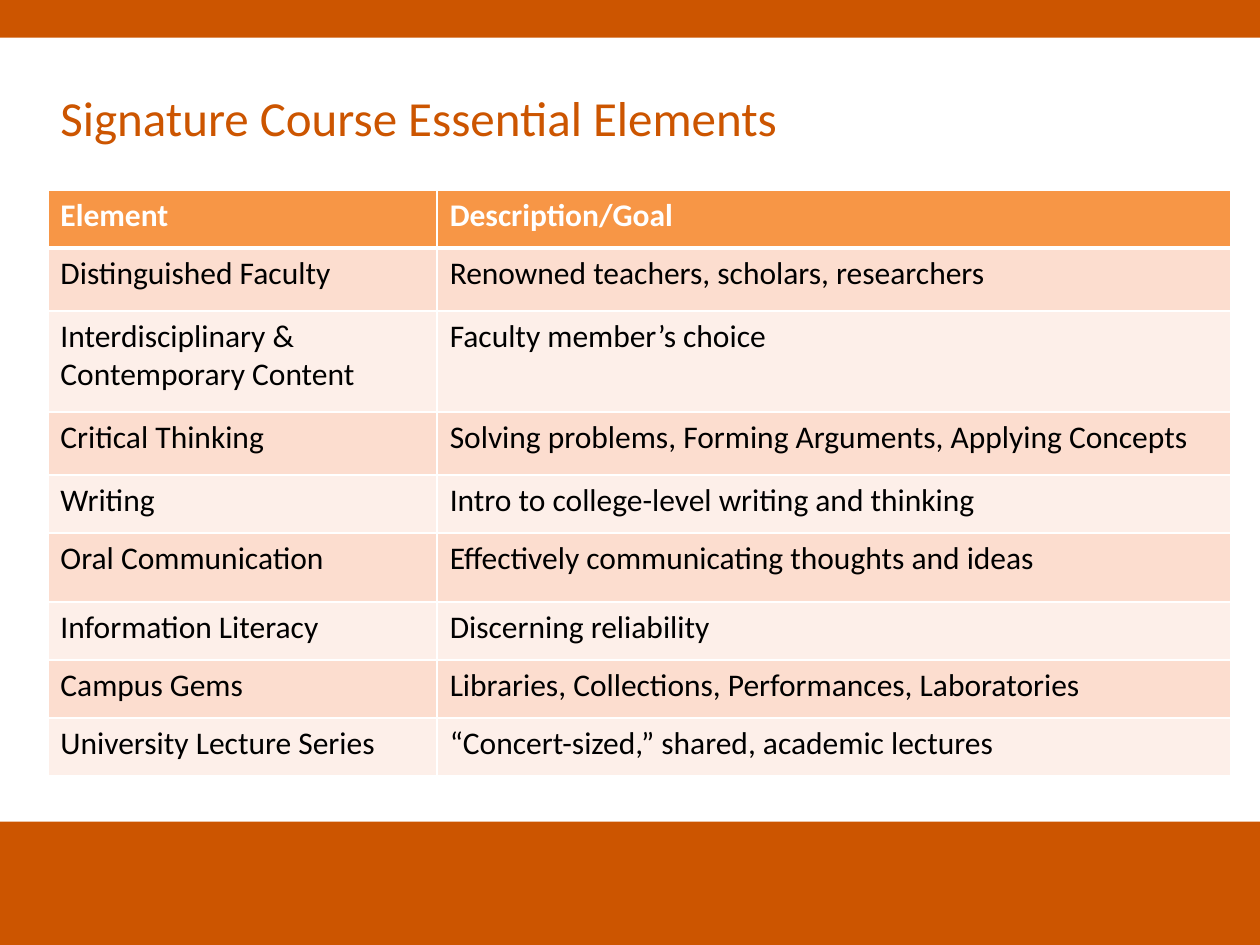
from lxml import etree
from pptx import Presentation
from pptx.dml.color import RGBColor
from pptx.enum.shapes import MSO_SHAPE
from pptx.enum.text import MSO_ANCHOR, PP_ALIGN
from pptx.oxml.ns import qn
from pptx.util import Inches, Pt

RECT = MSO_SHAPE.RECTANGLE
MIDDLE = MSO_ANCHOR.MIDDLE
LEFT = PP_ALIGN.LEFT

FONT = "Calibri"
WIDE, HIGH = 10, 7.5
EDGE, SPAN = 0.38, 9.39
COLS = [3.09, 6.3]
COLORS = {
    "brand": "CC5500",
    "head": "F79646",
    "odd": "FCDDCF",
    "even": "FDEFE9",
    "white": "FFFFFF",
    "black": "000000",
}
ROWS = [
    (0.46, "Element", "Description/Goal"),
    (0.5, "Distinguished Faculty", "Renowned teachers, scholars, researchers"),
    (0.8, "Interdisciplinary & Contemporary Content", "Faculty member’s choice"),
    (0.5, "Critical Thinking", "Solving problems, Forming Arguments, Applying Concepts"),
    (0.46, "Writing", "Intro to college-level writing and thinking"),
    (0.55, "Oral Communication", "Effectively communicating thoughts and ideas"),
    (0.46, "Information Literacy", "Discerning reliability"),
    (0.46, "Campus Gems", "Libraries, Collections, Performances, Laboratories"),
    (0.46, "University Lecture Series", "“Concert-sized,” shared, academic lectures"),
]


def color(name):
    return RGBColor.from_string(COLORS[name])


def style(para, size, tint, bold=False):
    font = para.font
    font.name, font.size, font.bold = FONT, Pt(size), bold
    font.color.rgb = color(tint)


def add_band(slide, top, high):
    band = slide.shapes.add_shape(RECT, 0, Inches(top), Inches(WIDE), Inches(high))
    band.shadow.inherit = False
    band.fill.solid()
    band.fill.fore_color.rgb = color("brand")
    band.line.fill.background()


def set_title(slide, text):
    title = slide.shapes.title
    title.left, title.top = Inches(EDGE), Inches(0.63)
    title.width, title.height = Inches(SPAN), Inches(0.6)
    frame = title.text_frame
    frame.text = text
    frame.vertical_anchor = MIDDLE
    para = frame.paragraphs[0]
    para.alignment = LEFT
    style(para, 28, "brand")


def add_border(cell, side, width):
    props = cell._tc.get_or_add_tcPr()
    line = etree.SubElement(props, qn(f"a:ln{side}"), w=str(Pt(width)))
    fill = etree.SubElement(line, qn("a:solidFill"))
    etree.SubElement(fill, qn("a:srgbClr"), val=COLORS["white"])


def fill_cell(cell, text, row):
    head = row == 0
    cell.text_frame.text = text
    style(cell.text_frame.paragraphs[0], 18, "white" if head else "black", head)
    for side in "LRTB":
        thick = (head and side == "B") or (row == 1 and side == "T")
        add_border(cell, side, 3 if thick else 1)
    cell.fill.solid()
    tint = "head" if head else ("odd" if row % 2 else "even")
    cell.fill.fore_color.rgb = color(tint)


def add_grid(slide):
    high = sum(row[0] for row in ROWS)
    frame = slide.shapes.add_table(
        len(ROWS), len(COLS), Inches(EDGE), Inches(1.51), Inches(SPAN), Inches(high)
    )
    table = frame.table
    for col, width in zip(table.columns, COLS):
        col.width = Inches(width)
    for row, (tall, *texts) in enumerate(ROWS):
        table.rows[row].height = Inches(tall)
        for col, text in enumerate(texts):
            fill_cell(table.cell(row, col), text, row)


def main():
    deck = Presentation()
    deck.slide_width, deck.slide_height = Inches(WIDE), Inches(HIGH)
    slide = deck.slides.add_slide(deck.slide_layouts[5])
    add_band(slide, 6.52, HIGH - 6.52)
    add_band(slide, 0, 0.3)
    set_title(slide, "Signature Course Essential Elements")
    add_grid(slide)
    deck.save("out.pptx")


if __name__ == "__main__":
    main()
